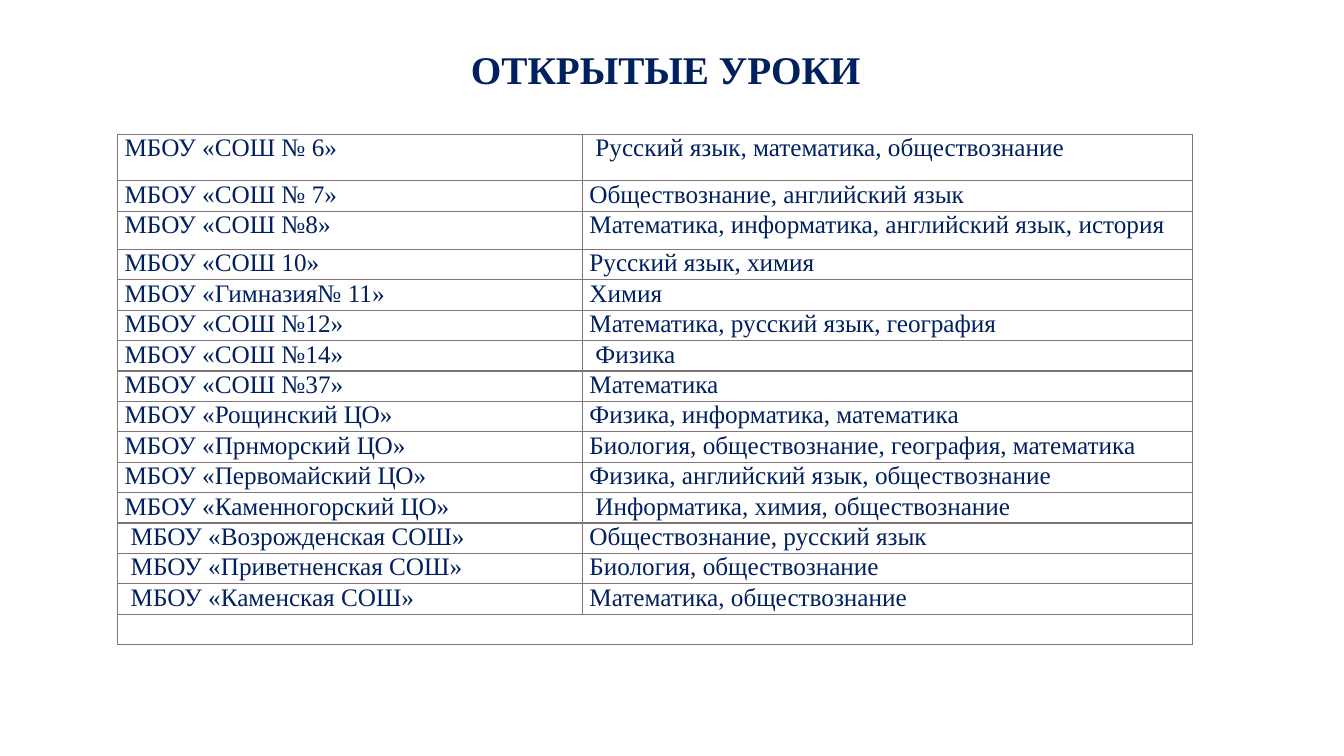
from dataclasses import dataclass

from lxml.etree import SubElement
from pptx import Presentation
from pptx.dml.color import RGBColor as Color
from pptx.enum.text import MSO_ANCHOR as Anchor, PP_ALIGN as Align
from pptx.oxml.ns import qn
from pptx.util import Inches, Pt


@dataclass(frozen=True)
class Theme:
    """Colours, type and spacing of the slide."""
    font: str = "Times New Roman"
    ink: str = "002060"
    paper: str = "FFFFFF"
    border: str = "80737A"
    title_size: int = 28
    body_size: int = 18
    border_width: float = 1
    cell_margin: float = 0.07
    indent: float = 0.06


THEME = Theme()
GRID_COLUMNS, GRID_ROWS = 80, 45
SLIDE_WIDTH, SLIDE_HEIGHT = Inches(13.333), Inches(7.5)
TITLE_BOX = (5, 3, 69.25, 2.5)
TABLE_ORIGIN = (7, 8)
COLUMN_WIDTHS = (27.67, 36.33)
ROW_HEIGHT = 1.81
TALL_ROWS = {0: 2.76, 2: 2.28}
INDENTED_CELLS = {(0, 1), (6, 1), (11, 1), (12, 0), (13, 0), (14, 0)}
LESSONS = (
    ("МБОУ «СОШ № 6»", "Русский язык, математика, обществознание"),
    ("МБОУ «СОШ № 7»", "Обществознание, английский язык"),
    ("МБОУ «СОШ №8»", "Математика, информатика, английский язык, история"),
    ("МБОУ «СОШ 10»", "Русский язык, химия"),
    ("МБОУ «Гимназия№ 11»", "Химия"),
    ("МБОУ «СОШ №12»", "Математика, русский язык, география"),
    ("МБОУ «СОШ №14»", "Физика"),
    ("МБОУ «СОШ №37»", "Математика"),
    ("МБОУ «Рощинский ЦО»", "Физика, информатика, математика"),
    ("МБОУ «Прнморский ЦО»", "Биология, обществознание, география, математика"),
    ("МБОУ «Первомайский ЦО»", "Физика, английский язык, обществознание"),
    ("МБОУ «Каменногорский ЦО»", "Информатика, химия, обществознание"),
    ("МБОУ «Возрожденская СОШ»", "Обществознание, русский язык"),
    ("МБОУ «Приветненская СОШ»", "Биология, обществознание"),
    ("МБОУ «Каменская СОШ»", "Математика, обществознание"),
)


def across(columns):
    """Return a horizontal length in grid columns."""
    return round(SLIDE_WIDTH * columns / GRID_COLUMNS)


def down(rows):
    """Return a vertical length in grid rows."""
    return round(SLIDE_HEIGHT * rows / GRID_ROWS)


def apply_format(target, values):
    """Set each attribute named in a dict of format values."""
    for name, value in values.items():
        setattr(target, name, value)


def write_text(paragraph, text, size, bold=False):
    """Write one run in the theme's font and colour."""
    run = paragraph.add_run()
    run.text = text
    apply_format(run.font, {"name": THEME.font, "size": Pt(size), "bold": bold})
    run.font.color.rgb = Color.from_string(THEME.ink)


def add_title(slide, text):
    """Add the centred slide title."""
    left, top, width, height = TITLE_BOX
    shape = slide.shapes.add_textbox(across(left), down(top), across(width), down(height))
    shape.fill.solid()
    shape.fill.fore_color.rgb = Color.from_string(THEME.paper)
    apply_format(shape.text_frame, {
        "word_wrap": True, "vertical_anchor": Anchor.MIDDLE,
        "margin_left": 0, "margin_right": 0, "margin_top": 0, "margin_bottom": 0,
    })
    paragraph = shape.text_frame.paragraphs[0]
    apply_format(paragraph, {"alignment": Align.CENTER, "line_spacing": 0.9})
    write_text(paragraph, text, THEME.title_size, bold=True)


def style_cell(cell):
    """Give a cell its margins, borders and clear fill."""
    margin = Inches(THEME.cell_margin)
    apply_format(cell, {
        "margin_left": margin, "margin_right": margin,
        "margin_top": 0, "margin_bottom": 0,
    })
    properties = cell._tc.get_or_add_tcPr()
    for side in ("lnL", "lnR", "lnT", "lnB"):
        line = SubElement(properties, qn(f"a:{side}"), w=str(Pt(THEME.border_width)))
        fill = SubElement(line, qn("a:solidFill"))
        SubElement(fill, qn("a:srgbClr"), val=THEME.border)
    cell.fill.background()


def add_lesson_table(slide, lessons):
    """Add the table of schools and subjects with an empty closing row."""
    row_heights = [down(TALL_ROWS.get(row, ROW_HEIGHT)) for row in range(len(lessons) + 1)]
    left, top = TABLE_ORIGIN
    table = slide.shapes.add_table(
        len(row_heights), len(COLUMN_WIDTHS), across(left), down(top),
        across(sum(COLUMN_WIDTHS)), sum(row_heights),
    ).table
    apply_format(table, {"first_row": False, "horz_banding": False})
    for column, width in zip(table.columns, COLUMN_WIDTHS):
        column.width = across(width)
    for row, height in zip(table.rows, row_heights):
        row.height = height
    for cell in table.iter_cells():
        style_cell(cell)
    for row_index, lesson in enumerate(lessons):
        for column_index, text in enumerate(lesson):
            paragraph = table.cell(row_index, column_index).text_frame.paragraphs[0]
            if (row_index, column_index) in INDENTED_CELLS:
                paragraph._p.get_or_add_pPr().set("marL", str(Inches(THEME.indent)))
            write_text(paragraph, text, THEME.body_size)
    last = len(lessons)
    table.cell(last, 0).merge(table.cell(last, len(COLUMN_WIDTHS) - 1))


def main():
    """Build and save the slide."""
    presentation = Presentation()
    apply_format(presentation, {"slide_width": SLIDE_WIDTH, "slide_height": SLIDE_HEIGHT})
    slide = presentation.slides.add_slide(presentation.slide_layouts[6])
    add_title(slide, "ОТКРЫТЫЕ УРОКИ")
    add_lesson_table(slide, LESSONS)
    presentation.save("out.pptx")


if __name__ == "__main__":
    main()
